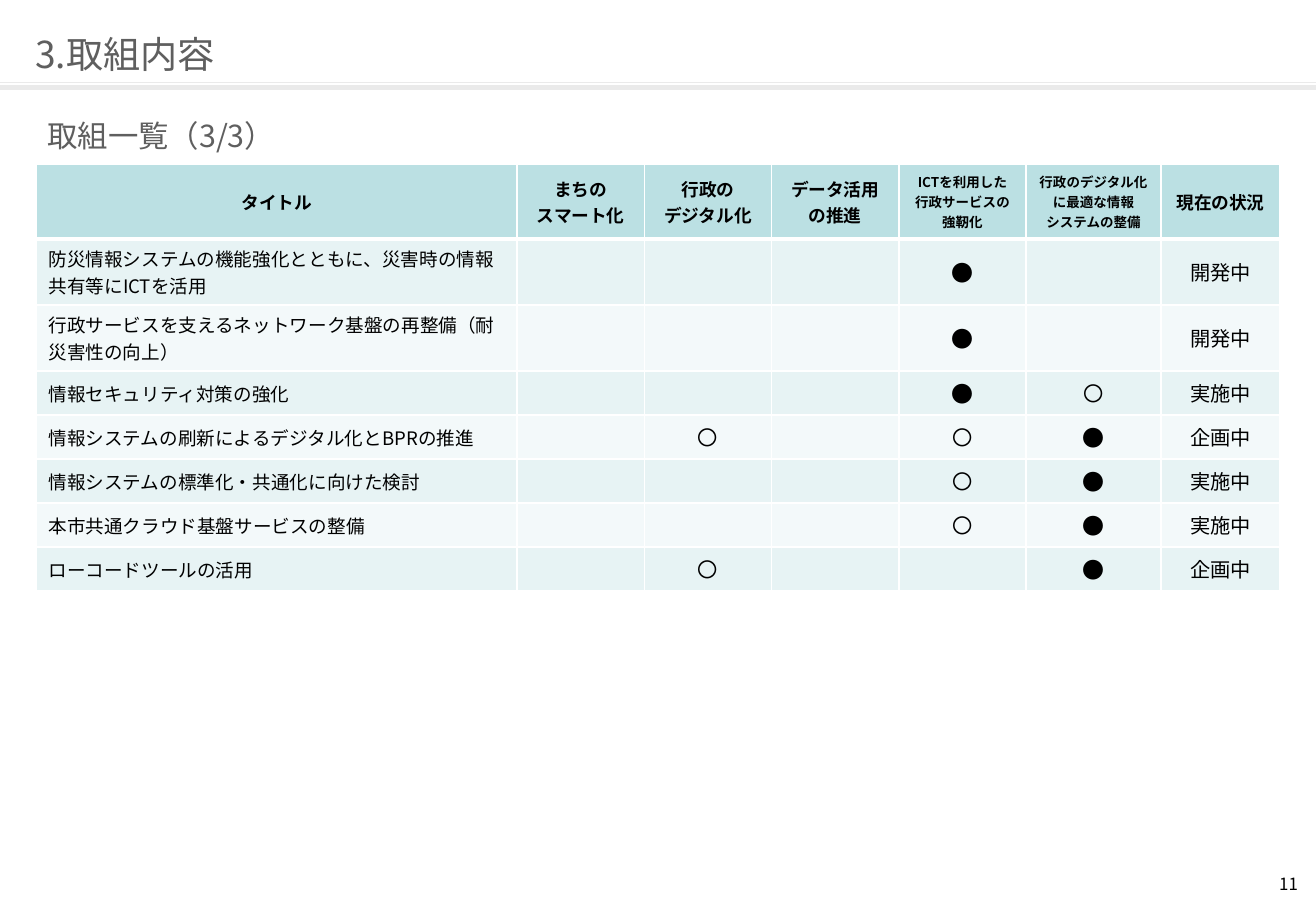
from pptx import Presentation
from pptx.dml.color import RGBColor
from pptx.enum.shapes import MSO_CONNECTOR, MSO_SHAPE
from pptx.enum.text import MSO_ANCHOR, PP_ALIGN
from pptx.oxml.ns import qn
from pptx.util import Cm, Pt
from lxml.etree import SubElement

FONT = "Noto Sans CJK JP"
GRAY, BLACK, WHITE, RULE = "5F5F5F", "000000", "FFFFFF", "EAEAEA"
HEADER_FILL, BAND_FILLS = "BBE0E3", ("E7F3F4", "F3F9FA")
MAIN, RELATED = "●", "〇"
SLIDE_WIDTH, SLIDE_HEIGHT = 27.51, 19.05

HEADERS = [
    ("タイトル", 10.5),
    ("まちの\nスマート化", 10.5),
    ("行政の\nデジタル化", 10.5),
    ("データ活用の推進", 10.5),
    ("ICTを利用した\n行政サービスの強靭化", 8),
    ("行政のデジタル化に最適な情報\nシステムの整備", 8),
    ("現在の状況", 10.5),
]
INITIATIVES = [
    ("防災情報システムの機能強化とともに、災害時の情報共有等にICTを活用", "", "", "", MAIN, "", "開発中"),
    ("行政サービスを支えるネットワーク基盤の再整備（耐災害性の向上）", "", "", "", MAIN, "", "開発中"),
    ("情報セキュリティ対策の強化", "", "", "", MAIN, RELATED, "実施中"),
    ("情報システムの刷新によるデジタル化とBPRの推進", "", RELATED, "", RELATED, MAIN, "企画中"),
    ("情報システムの標準化・共通化に向けた検討", "", "", "", RELATED, MAIN, "実施中"),
    ("本市共通クラウド基盤サービスの整備", "", "", "", RELATED, MAIN, "実施中"),
    ("ローコードツールの活用", "", RELATED, "", "", MAIN, "企画中"),
]
COLUMN_WIDTHS = [10.05] + [2.66] * 4 + [2.82, 2.49]
ROW_HEIGHTS = [1.57] + [1.38] * 2 + [0.92] * 5


def color(value):
    return RGBColor.from_string(value)


def write(frame, text, size, ink=BLACK, bold=False, align=PP_ALIGN.LEFT, spacing=1.0):
    frame.text = text
    frame.word_wrap = True
    for para in frame.paragraphs:
        para.alignment = align
        para.line_spacing = spacing
        for span in para.runs:
            span.font.size = Pt(size)
            span.font.bold = bold
            span.font.name = FONT
            span.font.color.rgb = color(ink)
            properties = span.font._element
            properties.set("lang", "ja-JP")
            SubElement(properties, qn("a:ea")).set("typeface", FONT)
        if not para.runs:
            SubElement(para._p, qn("a:endParaRPr")).set("sz", str(int(size * 100)))


def place(shape, left, top, width, height):
    shape.left, shape.top = Cm(left), Cm(top)
    shape.width, shape.height = Cm(width), Cm(height)


def clear_insets(frame):
    frame.margin_left = frame.margin_right = frame.margin_top = frame.margin_bottom = 0


def add_text_box(slide, left, top, width, height):
    box = slide.shapes.add_textbox(Cm(left), Cm(top), Cm(width), Cm(height))
    return box.text_frame


def style_cell(cell, fill, top, bottom):
    cell.vertical_anchor = MSO_ANCHOR.MIDDLE
    properties = cell._tc.get_or_add_tcPr()
    for side, width in (("L", 1), ("R", 1), ("T", top), ("B", bottom)):
        line = SubElement(properties, qn(f"a:ln{side}"), w=str(Pt(width)))
        paint = SubElement(line, qn("a:solidFill"))
        SubElement(paint, qn("a:srgbClr"), val=WHITE)
    cell.fill.solid()
    cell.fill.fore_color.rgb = color(fill)


def add_header(slide):
    line = slide.shapes.add_connector(MSO_CONNECTOR.STRAIGHT, 0, Cm(1.73), Cm(SLIDE_WIDTH), Cm(1.73))
    line.line.color.rgb = color(RULE)
    line.line.width = Pt(0.75)
    SubElement(line._element.spPr, qn("a:effectLst"))
    band = slide.shapes.add_shape(MSO_SHAPE.RECTANGLE, 0, Cm(1.78), Cm(SLIDE_WIDTH), Cm(0.1))
    band.shadow.inherit = False
    band.fill.solid()
    band.fill.fore_color.rgb = color(RULE)
    band.line.fill.background()

    title = slide.shapes.title
    place(title, 0.74, 0.61, 25.27, 1.04)
    clear_insets(title.text_frame)
    title.text_frame.vertical_anchor = MSO_ANCHOR.MIDDLE
    write(title.text_frame, "3.取組内容", 22, ink=GRAY)

    subtitle = add_text_box(slide, 0.74, 2.31, 25.86, 1.12)
    subtitle.vertical_anchor = MSO_ANCHOR.MIDDLE
    write(subtitle, "取組一覧（3/3）", 18, ink=GRAY, spacing=0.9)


def add_initiatives(slide):
    table = slide.shapes.add_table(
        len(ROW_HEIGHTS), len(COLUMN_WIDTHS), Cm(0.76), Cm(3.43),
        Cm(sum(COLUMN_WIDTHS)), Cm(sum(ROW_HEIGHTS)),
    ).table
    for column, width in zip(table.columns, COLUMN_WIDTHS):
        column.width = Cm(width)
    for row, height in zip(table.rows, ROW_HEIGHTS):
        row.height = Cm(height)

    for column, (text, size) in enumerate(HEADERS):
        cell = table.cell(0, column)
        style_cell(cell, HEADER_FILL, 1, 3)
        write(cell.text_frame, text, size, bold=True, align=PP_ALIGN.CENTER)
    for row, initiative in enumerate(INITIATIVES, 1):
        for column, text in enumerate(initiative):
            cell = table.cell(row, column)
            style_cell(cell, BAND_FILLS[(row - 1) % 2], 3 if row == 1 else 1, 1)
            size = 11 if column == 0 else 13 if text == MAIN else 12
            align = PP_ALIGN.LEFT if column == 0 else PP_ALIGN.CENTER
            write(cell.text_frame, text, size, align=align)


def main():
    deck = Presentation()
    deck.slide_width, deck.slide_height = Cm(SLIDE_WIDTH), Cm(SLIDE_HEIGHT)
    slide = deck.slides.add_slide(deck.slide_layouts[5])
    add_header(slide)
    add_initiatives(slide)
    page_number = add_text_box(slide, 20.7, 18.26, 6.43, 0.51)
    clear_insets(page_number)
    write(page_number, "11", 10, align=PP_ALIGN.RIGHT)
    deck.save("out.pptx")


if __name__ == "__main__":
    main()
